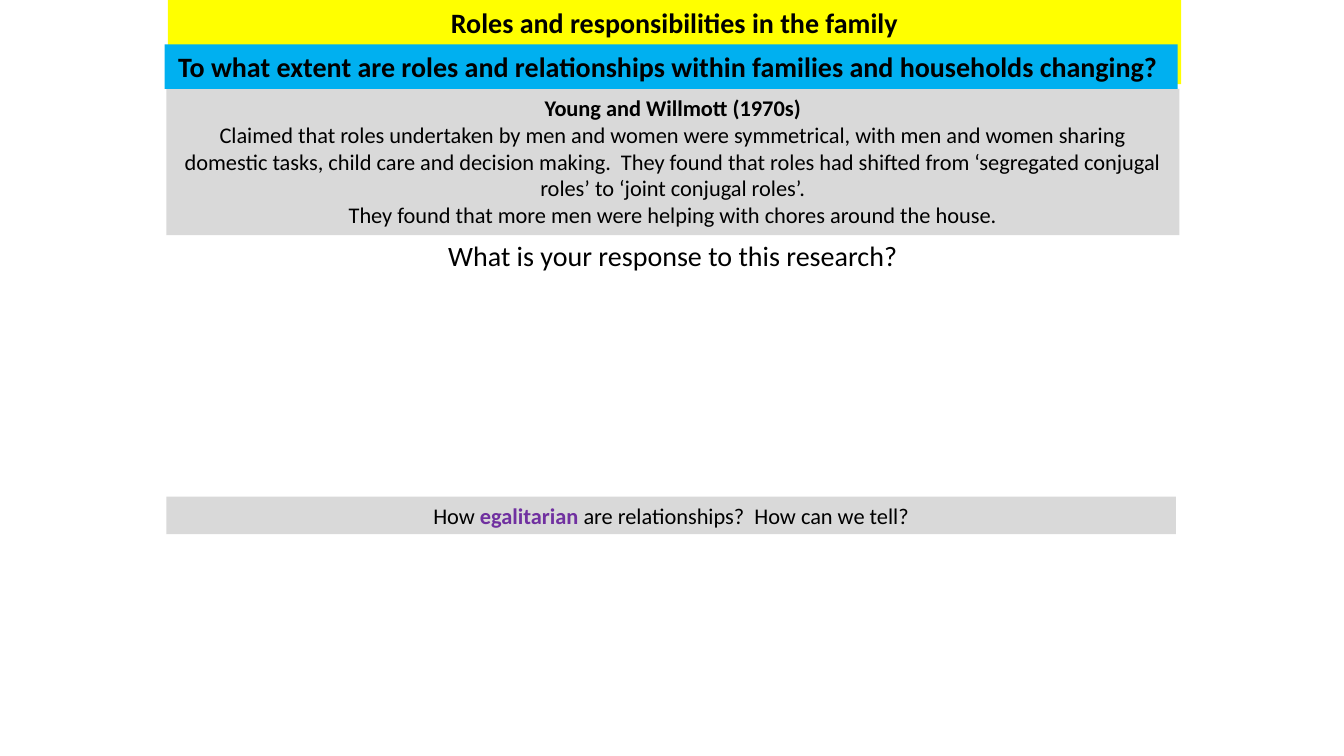
import pptx
import pptx.dml.color
import pptx.enum.shapes
import pptx.enum.text
import pptx.util

COLS, ROWS = 8, 17
BLACK, GREY, YELLOW, BLUE, PURPLE = "000000", "D9D9D9", "FFFF00", "00B0F0", "7030A0"


def rgb(value):
    return pptx.dml.color.RGBColor.from_string(value)


def add_run(p, text, size=16, bold=False, color=BLACK, font="Calibri"):
    r = p.add_run()
    r.text = text
    r.font.name = font
    r.font.size = pptx.util.Pt(size)
    r.font.bold = bold
    r.font.color.rgb = rgb(color)


class Deck:
    def __init__(self):
        self.prs = pptx.Presentation()
        self.prs.slide_width = pptx.util.Inches(13.33)
        self.prs.slide_height = pptx.util.Inches(7.5)
        self.s = self.prs.slides.add_slide(self.prs.slide_layouts[5])

    def box(self, col, row, cols, rows):
        w, h = self.prs.slide_width / COLS, self.prs.slide_height / ROWS
        return int(col * w), int(row * h), int(cols * w), int(rows * h)

    def set_text(self, sp, paragraphs, **style):
        tf = sp.text_frame
        tf.word_wrap = True
        tf.auto_size = pptx.enum.text.MSO_AUTO_SIZE.SHAPE_TO_FIT_TEXT
        tf.vertical_anchor = pptx.enum.text.MSO_ANCHOR.TOP
        for i, runs in enumerate(paragraphs):
            p = tf.paragraphs[0] if i == 0 else tf.add_paragraph()
            p.alignment = pptx.enum.text.PP_ALIGN.CENTER
            for text, extra in runs:
                add_run(p, text, **{**style, **extra})

    def set_fill(self, sp, color):
        sp.fill.solid()
        sp.fill.fore_color.rgb = rgb(color)

    def title(self, grid, color, paragraphs, **style):
        sp = self.s.shapes.title
        sp.left, sp.top, sp.width, sp.height = self.box(*grid)
        self.set_fill(sp, color)
        self.set_text(sp, paragraphs, **style)

    def band(self, grid, color, paragraphs, **style):
        rect = pptx.enum.shapes.MSO_SHAPE.RECTANGLE
        sp = self.s.shapes.add_shape(rect, *self.box(*grid))
        sp.shadow.inherit = False
        sp.line.fill.background()
        self.set_fill(sp, color)
        self.set_text(sp, paragraphs, **style)

    def label(self, grid, paragraphs, **style):
        sp = self.s.shapes.add_textbox(*self.box(*grid))
        self.set_text(sp, paragraphs, **style)


def main():
    deck = Deck()
    deck.band((0.99, 2, 6.03, 3.29), GREY, [
        [("Young and Willmott (1970s)", {"bold": True})],
        [("Claimed that roles undertaken by men and women were symmetrical, "
          "with men and women sharing domestic tasks, child care and decision "
          "making.  They found that roles had shifted from ‘segregated conjugal "
          "roles’ to ‘joint conjugal roles’.", {})],
        [("They found that more men were helping with chores around the house.", {})],
    ])
    deck.title((1, 0, 6.03, 1), YELLOW,
               [[("Roles and responsibilities in the family", {})]], size=20, bold=True)
    deck.label((1, 5.24, 6.01, 1),
               [[("What is your response to this research?", {})]], size=20)
    deck.band((0.98, 1, 6.03, 1), BLUE, [
        [("To what extent are roles and relationships within families and "
          "households changing? ", {})],
    ], size=20, bold=True)
    deck.band((0.99, 11.17, 6.01, 0.84), GREY, [
        [("How ", {}), ("egalitarian", {"bold": True, "color": PURPLE}),
         (" are relationships?  How can we tell?", {})],
    ])
    deck.prs.save("out.pptx")


if __name__ == "__main__":
    main()
